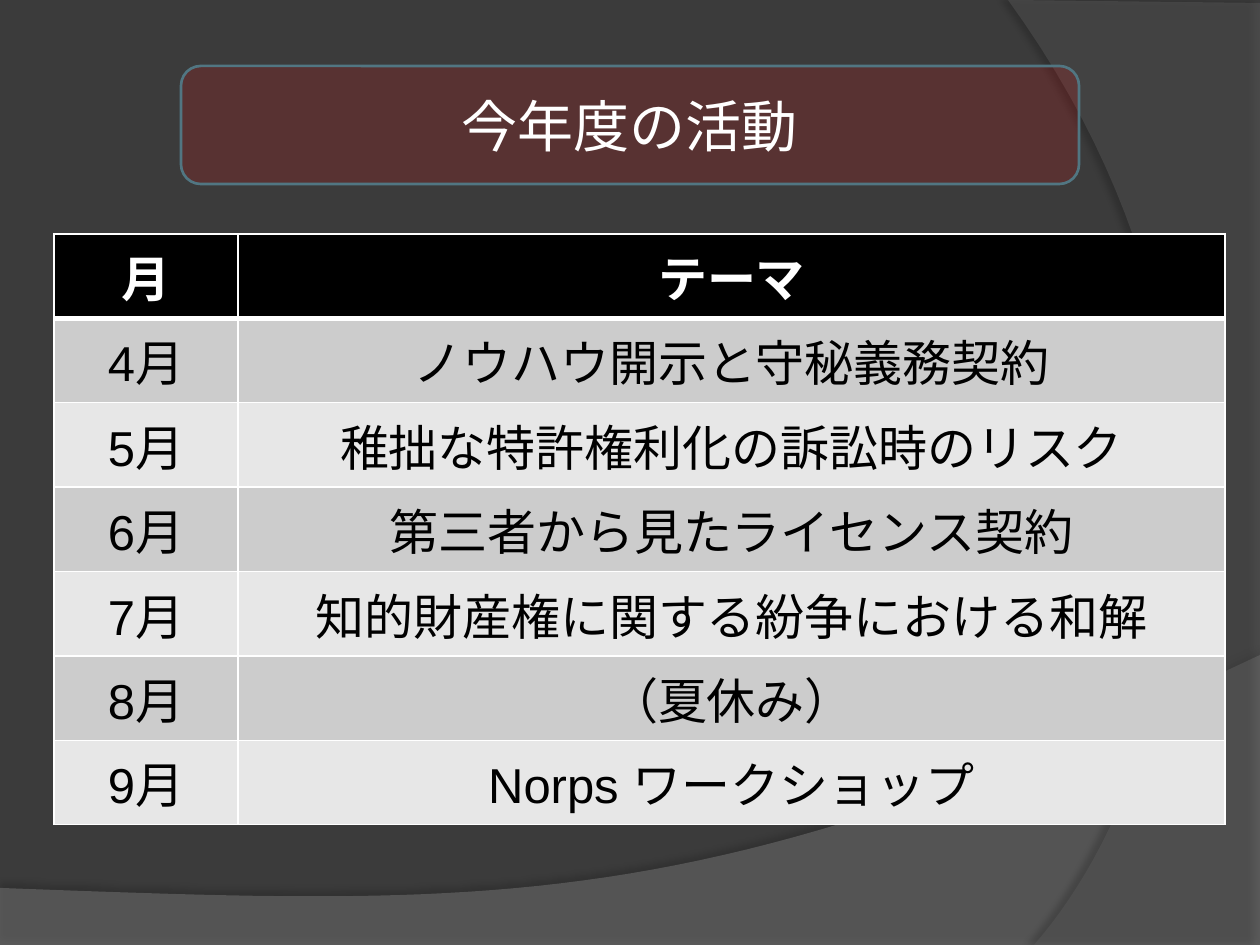
from dataclasses import dataclass

from lxml.etree import SubElement
from pptx import Presentation
from pptx.dml.color import RGBColor
from pptx.enum.lang import MSO_LANGUAGE_ID as Language
from pptx.enum.shapes import MSO_SHAPE as Preset
from pptx.enum.text import MSO_ANCHOR as Anchor, PP_ALIGN as Align
from pptx.oxml.ns import qn
from pptx.util import Emu, Pt

SCALE = 914400 / 126
FONT = "Arial"
COLORS = {
    "background": "3B3B3B", "wave": "7F7F7F", "side": "5E5E5E",
    "panel": "FF0000", "panel_line": "517682",
    "header": "000000", "band_dark": "CCCCCC", "band_light": "E7E7E7",
    "white": "FFFFFF", "black": "000000",
}
HEADER = ("月", "テーマ")
SCHEDULE = [
    ("4月", "ノウハウ開示と守秘義務契約"),
    ("5月", "稚拙な特許権利化の訴訟時のリスク"),
    ("6月", "第三者から見たライセンス契約"),
    ("7月", "知的財産権に関する紛争における和解"),
    ("8月", "（夏休み）"),
    ("9月", "Norps ワークショップ"),
]
Point = tuple[float, float]


@dataclass(frozen=True)
class Frame:
    left: int
    top: int
    width: int
    height: int

    def emu(self) -> tuple[Emu, ...]:
        return tuple(px(n) for n in (self.left, self.top, self.width, self.height))


@dataclass(frozen=True)
class Swoosh:
    """A background outline: straight corners, then one curve from the last corner."""
    color: str
    opacity: int
    corners: tuple[Point, ...]
    curve: tuple[Point, Point, Point]
    shadow_opacity: int
    shadow_distance: float
    shadow_angle: int


SWOOSHES = [
    Swoosh("wave", 45, ((0, 888), (0, 946), (1260, 946), (1260, 655)),
           ((704, 919), (493, 906), (0, 888)), 35, 3.5, 270),
    Swoosh("side", 40, ((1260, 3), (1260, 945), (1034, 945)),
           ((1179, 780), (1283, 378), (1008, 0)), 45, 4, 180),
]
TITLE_FRAME = Frame(181, 66, 898, 118)
TABLE_FRAME = Frame(54, 234, 1171, 591)
MONTH_WIDTH = 184


def px(length: float) -> Emu:
    return Emu(round(length * SCALE))


def rgb(name: str) -> RGBColor:
    return RGBColor.from_string(COLORS[name])


def fill_translucent(shape, color: str, opacity: int) -> None:
    shape.fill.solid()
    shape.fill.fore_color.rgb = rgb(color)
    tint = shape._element.spPr.find(qn("a:solidFill"))[0]
    SubElement(tint, qn("a:alpha"), val=str(opacity * 1000))


def bezier(start: Point, curve: tuple[Point, Point, Point], steps: int = 48) -> list[Point]:
    points = []
    for step in range(1, steps + 1):
        t = step / steps
        weights = ((1 - t) ** 3, 3 * t * (1 - t) ** 2, 3 * t * t * (1 - t), t ** 3)
        points.append(tuple(
            sum(weight * point[axis] for weight, point in zip(weights, (start, *curve)))
            for axis in (0, 1)))
    return points


def draw_swoosh(page, swoosh: Swoosh) -> None:
    outline = [(x * SCALE, y * SCALE) for x, y in
               (*swoosh.corners, *bezier(swoosh.corners[-1], swoosh.curve))]
    builder = page.shapes.build_freeform(*outline[0])
    builder.add_line_segments(outline[1:], close=True)
    shape = builder.convert_to_shape()
    fill_translucent(shape, swoosh.color, swoosh.opacity)
    shape.line.fill.background()
    shape.shadow.inherit = False
    effects = shape._element.spPr.find(qn("a:effectLst"))
    shadow = SubElement(effects, qn("a:outerShdw"), blurRad=str(Pt(4)),
                        dist=str(Pt(swoosh.shadow_distance)),
                        dir=str(swoosh.shadow_angle * 60000),
                        algn="ctr", rotWithShape="0")
    tint = SubElement(shadow, qn("a:srgbClr"), val=COLORS["black"])
    SubElement(tint, qn("a:alpha"), val=str(swoosh.shadow_opacity * 1000))


def write(text_frame, text: str, size: int, color: str, bold: bool = False) -> None:
    para = text_frame.paragraphs[0]
    para.alignment = Align.CENTER
    span = para.add_run()
    span.text = text
    font = span.font
    font.name, font.size, font.bold = FONT, Pt(size), bold
    font.color.rgb = rgb(color)
    font.language_id = Language.JAPANESE


def draw_title(page, text: str) -> None:
    panel = page.shapes.add_shape(Preset.ROUNDED_RECTANGLE, *TITLE_FRAME.emu())
    fill_translucent(panel, "panel", 15)
    panel.line.color.rgb = rgb("panel_line")
    panel.line.width = Pt(1.5)
    panel.shadow.inherit = False

    title = page.shapes.title
    title.left, title.top, title.width, title.height = TITLE_FRAME.emu()
    title.text_frame.vertical_anchor = Anchor.MIDDLE
    write(title.text_frame, text, 32, "white")
    panel._element.addnext(title._element)


def set_borders(cell, top: int, bottom: int) -> None:
    """Give the cell white borders; top and bottom widths are in points."""
    properties = cell._tc.get_or_add_tcPr()
    for side, width in (("L", 1), ("R", 1), ("T", top), ("B", bottom)):
        line = SubElement(properties, qn(f"a:ln{side}"), w=str(Pt(width)))
        paint = SubElement(line, qn("a:solidFill"))
        SubElement(paint, qn("a:srgbClr"), val=COLORS["white"])


def draw_schedule(page) -> None:
    rows = [HEADER, *SCHEDULE]
    table = page.shapes.add_table(len(rows), len(HEADER), *TABLE_FRAME.emu()).table
    table.horz_banding = False
    table.columns[0].width = px(MONTH_WIDTH)
    table.columns[1].width = px(TABLE_FRAME.width - MONTH_WIDTH)
    for row, texts in enumerate(rows):
        is_header = row == 0
        band = "header" if is_header else ("band_light", "band_dark")[row % 2]
        for column, text in enumerate(texts):
            cell = table.cell(row, column)
            set_borders(cell, top=3 if row == 1 else 1, bottom=3 if is_header else 1)
            cell.fill.solid()
            cell.fill.fore_color.rgb = rgb(band)
            cell.vertical_anchor = Anchor.MIDDLE
            write(cell.text_frame, text, 28, "white" if is_header else "black", is_header)


def main() -> None:
    deck = Presentation()
    deck.slide_width, deck.slide_height = px(1260), px(945)
    page = deck.slides.add_slide(deck.slide_layouts[5])
    page.background.fill.solid()
    page.background.fill.fore_color.rgb = rgb("background")
    for swoosh in SWOOSHES:
        draw_swoosh(page, swoosh)
    draw_schedule(page)
    draw_title(page, "今年度の活動")
    deck.save("out.pptx")


if __name__ == "__main__":
    main()
